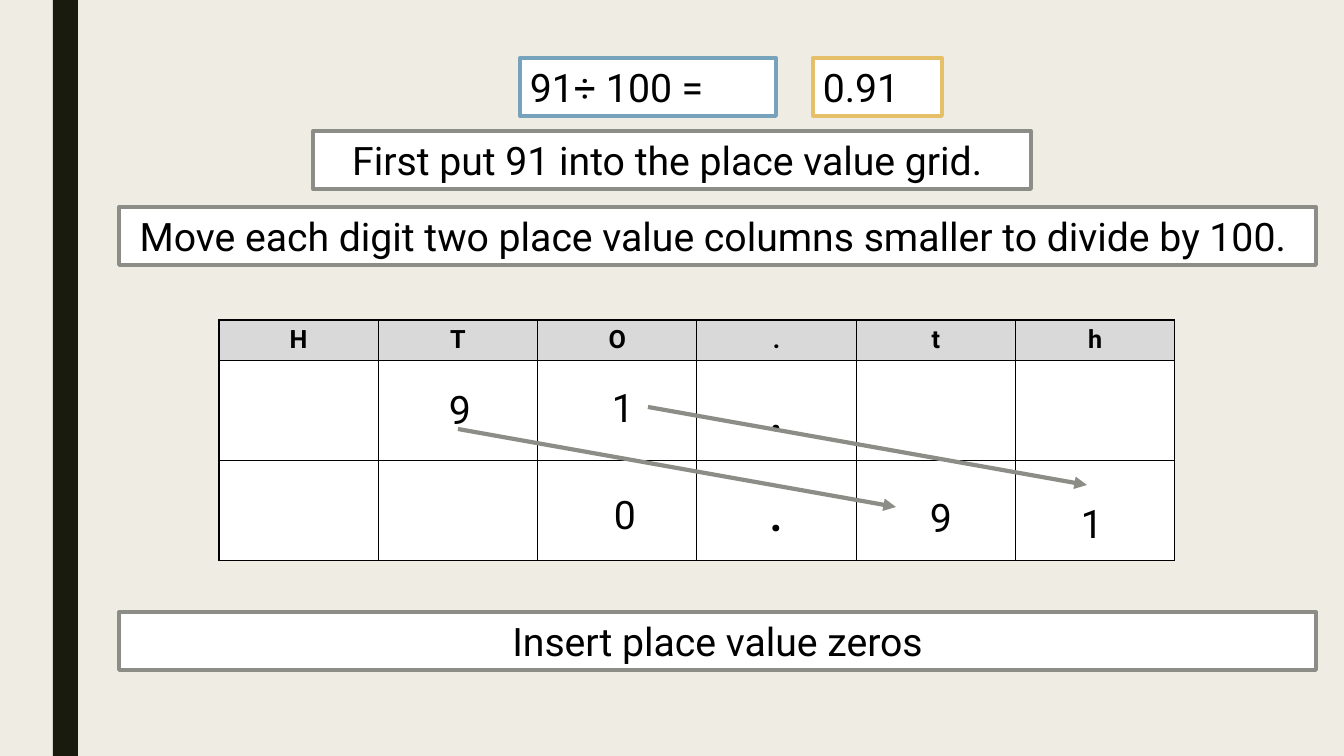
"""Build a slide that divides 91 by 100 on a place value grid."""
from dataclasses import dataclass

from lxml import etree
from pptx import Presentation
from pptx.dml.color import RGBColor
from pptx.enum.shapes import MSO_CONNECTOR, MSO_SHAPE
from pptx.enum.text import MSO_ANCHOR, MSO_AUTO_SIZE, PP_ALIGN
from pptx.oxml.ns import qn
from pptx.shapes.autoshape import Shape
from pptx.slide import Slide
from pptx.table import _Cell
from pptx.text.text import TextFrame
from pptx.util import Emu, Pt

RECTANGLE = MSO_SHAPE.RECTANGLE
STRAIGHT = MSO_CONNECTOR.STRAIGHT
LEFT = PP_ALIGN.LEFT
CENTER = PP_ALIGN.CENTER
TOP = MSO_ANCHOR.TOP
MIDDLE = MSO_ANCHOR.MIDDLE
GROW = MSO_AUTO_SIZE.SHAPE_TO_FIT_TEXT

EMU_PER_PX = 12192000 / 1344
SLIDE_WIDTH, SLIDE_HEIGHT = 1344, 756
LINE_HEIGHT = 58
DIGIT_WIDTH = 122
FONT = "Roboto"
COLORS = {
    "background": "EFEDE3",
    "bar": "191B0E",
    "white": "FFFFFF",
    "black": "000000",
    "header": "D9D9D9",
    "blue": "77A2BB",
    "gold": "E6C069",
    "gray": "8C8D86",
}


@dataclass(frozen=True)
class Box:
    text: str
    left: int
    top: int
    width: int
    outline: str = "gray"
    alignment: PP_ALIGN = CENTER


@dataclass(frozen=True)
class Digit:
    text: str
    left: int
    top: int


@dataclass(frozen=True)
class Arrow:
    start: tuple[int, int]
    end: tuple[int, int]


BOXES = [
    Box("91÷ 100 =", 520, 58, 256, "blue", LEFT),
    Box("0.91", 813, 58, 129, "gold", LEFT),
    Box("First put 91 into the place value grid. ", 313, 131, 718),
    Box("Move each digit two place value columns smaller to divide by 100. ",
        119, 207, 1197),
    Box("Insert place value zeros", 119, 612, 1197),
]
DIGITS = [
    Digit("9", 399, 380),
    Digit("1", 562, 378),
    Digit("0", 564, 485),
    Digit("9", 880, 488),
    Digit("1", 1031, 494),
]
ARROWS = [
    Arrow((648, 407), (1087, 485)),
    Arrow((458, 429), (896, 507)),
]
GRID_ROWS = ["HTO.th", "   .  ", "   .  "]
GRID_ROW_HEIGHTS = [40, 100, 100]
GRID_LEFT, GRID_TOP, GRID_WIDTH = 219, 320, 956


def px(length: int) -> Emu:
    """Turn pixels into EMU."""
    return Emu(round(length * EMU_PER_PX))


def color(name: str) -> RGBColor:
    """Look up a named colour."""
    return RGBColor.from_string(COLORS[name])


def write_text(frame: TextFrame, text: str, size: int,
               alignment: PP_ALIGN = CENTER, bold: bool = False) -> None:
    """Set a single paragraph and format its runs."""
    frame.text = text
    paragraph = frame.paragraphs[0]
    paragraph.alignment = alignment
    for run in paragraph.runs:
        run.font.name = FONT
        run.font.size = Pt(size)
        run.font.bold = bold
        run.font.color.rgb = color("black")


def write_growing_text(shape: Shape, text: str, alignment: PP_ALIGN) -> None:
    """Write 28 pt text into a shape that grows with it."""
    frame = shape.text_frame
    frame.word_wrap = True
    frame.auto_size = GROW
    frame.vertical_anchor = TOP
    write_text(frame, text, 28, alignment)


def add_rectangle(slide: Slide, left: int, top: int, width: int, height: int,
                  fill: str) -> Shape:
    """Add a filled rectangle without a shadow or an outline."""
    shape = slide.shapes.add_shape(
        RECTANGLE, px(left), px(top), px(width), px(height))
    shape.shadow.inherit = False
    shape.fill.solid()
    shape.fill.fore_color.rgb = color(fill)
    shape.line.fill.background()
    return shape


def add_box(slide: Slide, box: Box) -> None:
    """Add a white outlined box with text."""
    shape = add_rectangle(
        slide, box.left, box.top, box.width, LINE_HEIGHT, "white")
    shape.line.color.rgb = color(box.outline)
    shape.line.width = Pt(2.75)
    write_growing_text(shape, box.text, box.alignment)


def add_digit(slide: Slide, digit: Digit) -> None:
    """Add a digit that sits on the grid."""
    shape = slide.shapes.add_textbox(
        px(digit.left), px(digit.top), px(DIGIT_WIDTH), px(LINE_HEIGHT))
    write_growing_text(shape, digit.text, CENTER)


def add_arrow(slide: Slide, arrow: Arrow) -> None:
    """Add a straight arrow between two points."""
    connector = slide.shapes.add_connector(
        STRAIGHT, *map(px, arrow.start), *map(px, arrow.end))
    connector.line.color.rgb = color("gray")
    connector.line.width = Pt(3)
    properties = connector._element.spPr
    outline = properties.find(qn("a:ln"))
    etree.SubElement(outline, qn("a:tailEnd"), type="triangle")
    etree.SubElement(properties, qn("a:effectLst"))


def style_cell(cell: _Cell, fill: str) -> None:
    """Give a cell thin black borders and a plain fill."""
    properties = cell._tc.get_or_add_tcPr()
    for side in ("lnL", "lnR", "lnT", "lnB"):
        border = etree.SubElement(properties, qn(f"a:{side}"), w=str(Pt(1)))
        solid = etree.SubElement(border, qn("a:solidFill"))
        etree.SubElement(solid, qn("a:srgbClr"), val=COLORS["black"])
    cell.fill.solid()
    cell.fill.fore_color.rgb = color(fill)


def add_grid(slide: Slide) -> None:
    """Add the place value grid."""
    table = slide.shapes.add_table(
        len(GRID_ROWS), len(GRID_ROWS[0]), px(GRID_LEFT), px(GRID_TOP),
        px(GRID_WIDTH), px(sum(GRID_ROW_HEIGHTS))).table
    table.first_row = False
    table.horz_banding = False
    for row_index, symbols in enumerate(GRID_ROWS):
        is_header = row_index == 0
        table.rows[row_index].height = px(GRID_ROW_HEIGHTS[row_index])
        for column_index, symbol in enumerate(symbols):
            cell = table.cell(row_index, column_index)
            style_cell(cell, "header" if is_header else "white")
            cell.vertical_anchor = TOP if is_header else MIDDLE
            if symbol.strip():
                size = 18 if is_header else 44
                write_text(cell.text_frame, symbol, size, bold=is_header)


def main() -> None:
    """Build and save the presentation."""
    presentation = Presentation()
    presentation.slide_width = px(SLIDE_WIDTH)
    presentation.slide_height = px(SLIDE_HEIGHT)
    slide = presentation.slides.add_slide(
        presentation.slide_layouts.get_by_name("Blank"))
    slide.background.fill.solid()
    slide.background.fill.fore_color.rgb = color("background")
    add_rectangle(slide, 53, 0, 25, SLIDE_HEIGHT, "bar")
    for box in BOXES:
        add_box(slide, box)
    add_grid(slide)
    for digit in DIGITS:
        add_digit(slide, digit)
    for arrow in ARROWS:
        add_arrow(slide, arrow)
    presentation.save("out.pptx")


if __name__ == "__main__":
    main()
